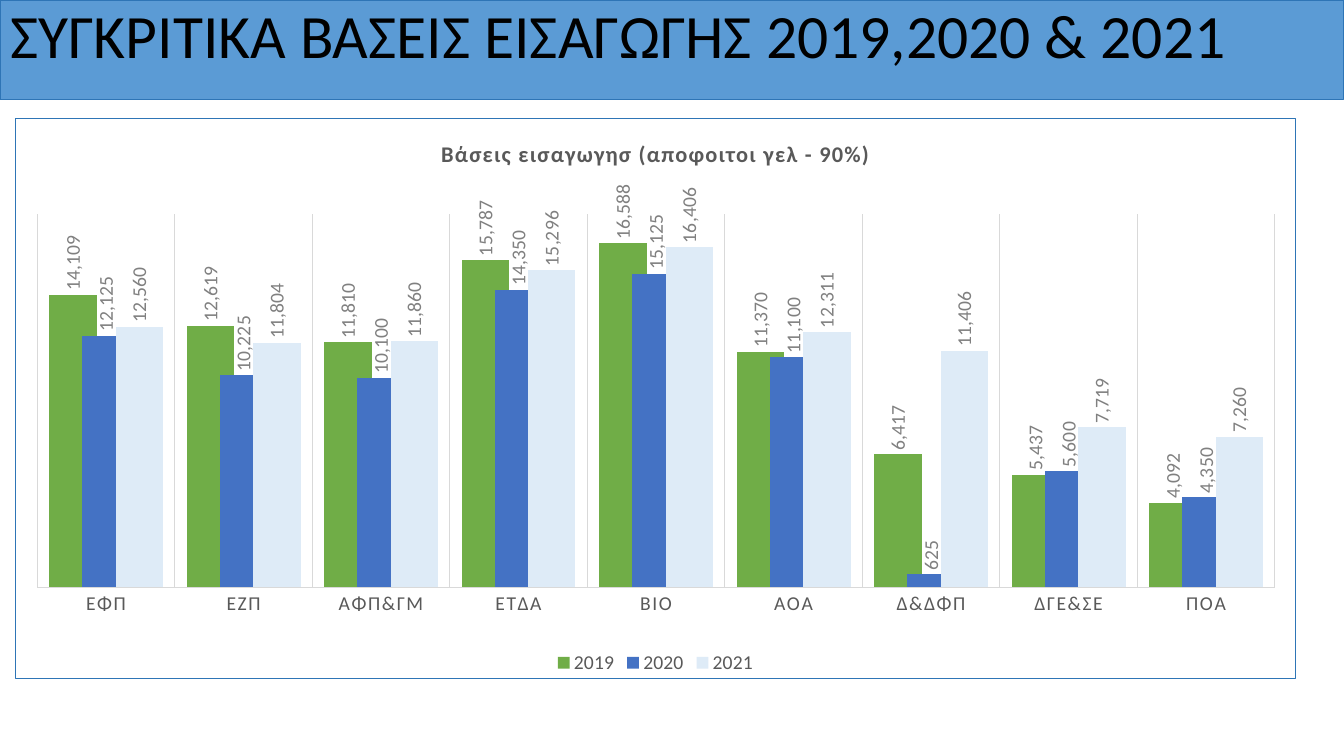
"""Build the slide comparing admission thresholds for 2019, 2020 and 2021."""
from pptx import Presentation
from pptx import util as u
from pptx.chart.data import CategoryChartData
from pptx.dml.color import RGBColor
from pptx.enum import chart as charts, text
from pptx.oxml import parse_xml
from pptx.oxml.ns import nsdecls, qn

BLACK = RGBColor(0x00, 0x00, 0x00)
BANNER_BLUE = RGBColor(0x5B, 0x9B, 0xD5)
BORDER_BLUE = RGBColor(0x2E, 0x75, 0xB6)
DARK_GRAY = RGBColor(0x59, 0x59, 0x59)
LABEL_GRAY = RGBColor(0x80, 0x80, 0x80)
GRID_GRAY = RGBColor(0xD9, 0xD9, 0xD9)
GREEN = RGBColor(0x70, 0xAD, 0x47)
BLUE = RGBColor(0x44, 0x72, 0xC4)
PALE_BLUE = RGBColor(0xDE, 0xEB, 0xF7)

DEPARTMENTS = ["ΕΦΠ", "ΕΖΠ", "ΑΦΠ&ΓΜ", "ΕΤΔΑ", "ΒΙΟ", "ΑΟΑ", "Δ&ΔΦΠ", "ΔΓΕ&ΣΕ", "ΠΟΑ"]
THRESHOLDS = {
    "2019": (GREEN, [14109, 12619, 11810, 15787, 16588, 11370, 6417, 5437, 4092]),
    "2020": (BLUE, [12125, 10225, 10100, 14350, 15125, 11100, 625, 5600, 4350]),
    "2021": (PALE_BLUE, [12560, 11804, 11860, 15296, 16406, 12311, 11406, 7719, 7260]),
}


def format_font(font, size=14, color=DARK_GRAY, bold=False):
    font.name = "Calibri"
    font.size = u.Pt(size)
    font.bold = bold
    font.color.rgb = color


def write_text(frame, words, spacing=0, **font_format):
    paragraph = frame.paragraphs[0]
    run = paragraph.add_run()
    run.text = words
    format_font(run.font, **font_format)
    run._r.get_or_add_rPr().set("spc", str(spacing))
    return paragraph


presentation = Presentation()
presentation.slide_width = u.Cm(33.87)
presentation.slide_height = u.Cm(19.05)
slide = presentation.slides.add_slide(presentation.slide_layouts[5])

title = slide.shapes.title
title.left, title.top = u.Cm(0), u.Cm(0)
title.width, title.height = presentation.slide_width, u.Cm(2.5)
title.fill.solid()
title.fill.fore_color.rgb = BANNER_BLUE
title.line.color.rgb = BORDER_BLUE
title.line.width = u.Pt(0.75)
title.text_frame.word_wrap = True
title.text_frame.auto_size = text.MSO_AUTO_SIZE.NONE
title.text_frame.vertical_anchor = text.MSO_ANCHOR.TOP
heading = write_text(title.text_frame, "ΣΥΓΚΡΙΤΙΚΑ ΒΑΣΕΙΣ ΕΙΣΑΓΩΓΗΣ 2019,2020 & 2021",
                     size=44, color=BLACK)
heading.alignment = text.PP_ALIGN.LEFT
heading.line_spacing = 0.9

chart_data = CategoryChartData(number_format="#,##0")
chart_data.categories = DEPARTMENTS
for year, (color, values) in THRESHOLDS.items():
    chart_data.add_series(year, values)
chart = slide.shapes.add_chart(
    charts.XL_CHART_TYPE.COLUMN_CLUSTERED,
    u.Cm(0.38), u.Cm(2.97), u.Cm(32.28), u.Cm(14.15), chart_data).chart
format_font(chart.font, color=BLACK)

chart.has_title = True
write_text(chart.chart_title.text_frame, "Βάσεις εισαγωγησ (αποφοιτοι γελ - 90%)",
           size=16, bold=True, spacing=100)
chart.chart_title.include_in_layout = False

chart.has_legend = True
chart.legend.position = charts.XL_LEGEND_POSITION.BOTTOM
chart.legend.include_in_layout = False
format_font(chart.legend.font)

category_axis = chart.category_axis
category_axis.major_tick_mark = charts.XL_TICK_MARK.NONE
category_axis.has_major_gridlines = True
for line in (category_axis.format.line, category_axis.major_gridlines.format.line):
    line.color.rgb = GRID_GRAY
    line.width = u.Pt(0.75)
format_font(category_axis.tick_labels.font)
for properties in category_axis._element.iter(qn("a:defRPr")):
    properties.set("spc", "100")

value_axis = chart.value_axis
value_axis.visible = False
value_axis.has_major_gridlines = False
value_axis.minimum_scale = 0
value_axis.maximum_scale = 18000

plot = chart.plots[0]
plot.gap_width = 50
plot.overlap = 30
plot.vary_by_categories = False
for series in plot.series:
    series.format.fill.solid()
    series.format.fill.fore_color.rgb = THRESHOLDS[series.name][0]
    labels = series.data_labels
    labels.show_value = True
    labels.number_format = "#,##0"
    labels.number_format_is_linked = False
    labels.position = charts.XL_LABEL_POSITION.OUTSIDE_END
    format_font(labels.font, color=LABEL_GRAY)
    for body in labels._element.iter(qn("a:bodyPr")):
        body.set("rot", "-5400000")
        body.set("vert", "horz")

plot_area = chart._chartSpace.chart.plotArea
for layout in plot_area.findall(qn("c:layout")):
    plot_area.remove(layout)
plot_area.insert(0, parse_xml(
    f'<c:layout {nsdecls("c")}><c:manualLayout><c:layoutTarget val="inner"/>'
    '<c:xMode val="edge"/><c:yMode val="edge"/><c:x val="0.017"/><c:y val="0.171"/>'
    '<c:w val="0.967"/><c:h val="0.666"/></c:manualLayout></c:layout>'))
chart._chartSpace.chart.addnext(parse_xml(
    f'<c:spPr {nsdecls("c", "a")}><a:noFill/><a:ln w="{u.Pt(0.75)}"><a:solidFill>'
    f'<a:srgbClr val="{BORDER_BLUE}"/></a:solidFill></a:ln></c:spPr>'))

presentation.save("out.pptx")
